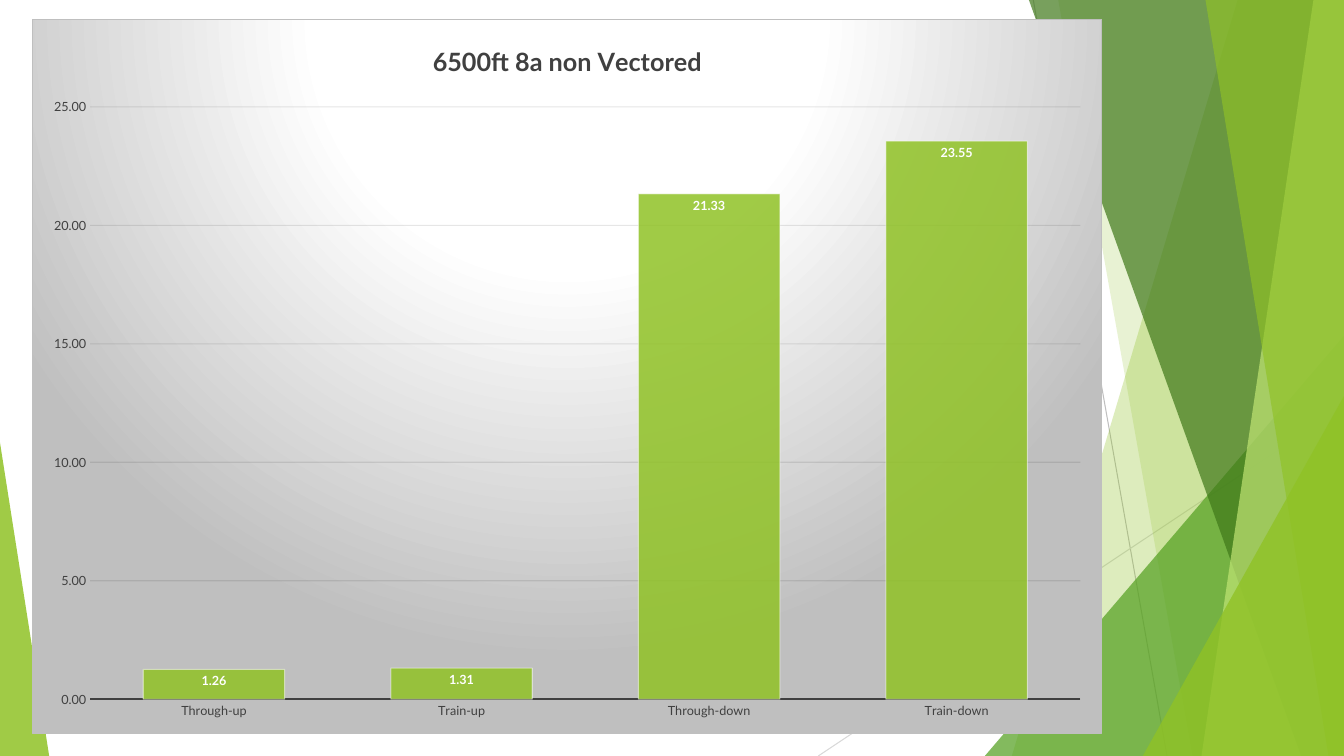
"""Build a slide with a column chart over a faceted green backdrop."""
from lxml import etree
from pptx import Presentation
from pptx import util as u
from pptx.chart import data as cd
from pptx.dml.color import RGBColor
from pptx.enum import chart as ce, shapes
from pptx.oxml import ns, parse_xml

LIME = RGBColor(0x90, 0xC2, 0x26)
LEAF = RGBColor(0x54, 0xA0, 0x21)
PINE = RGBColor(0x3F, 0x78, 0x19)
PALE = RGBColor(0xC0, 0xE4, 0x74)
SILVER = RGBColor(0xBF, 0xBF, 0xBF)
MIST = RGBColor(0xD9, 0xD9, 0xD9)
SLATE = RGBColor(0x40, 0x40, 0x40)
INK = RGBColor(0x0D, 0x0D, 0x0D)
BLACK = RGBColor(0, 0, 0)
WHITE = RGBColor(0xFF, 0xFF, 0xFF)

WIDE, TALL = 33.87, 19.05
TITLE = "6500ft 8a non Vectored"
TIMES = {"Through-up": 1.26, "Train-up": 1.31, "Through-down": 21.33, "Train-down": 23.55}
FRAME = (0.81, 0.48, 26.97, 18.01)
RAYS = [((26.04, 0), (29.41, TALL), SILVER), ((WIDE, 10.24), (20.62, TALL), MIST)]
# Each facet: kind, numbers, colour, opacity
FACETS = [
    ("band", (31.19, 25.5), LIME, 30),
    ("band", (26.67, 30.05), LIME, 20),
    ("peak", (24.82, 8.46, WIDE, 1), LEAF, 72),
    ("band", (25.93, 32.79), PINE, 70),
    ("band", (33.1, 30.28), PALE, 70),
    ("band", (30.38, 33.48), LIME, 65),
    ("peak", (28.8, 9.98, WIDE, 1), LIME, 80),
    ("peak", (0, 11.15, 1.24, 0), LIME, 85),
]
FONTS = {
    "base": {"name": "Lato", "size": u.Pt(10)},
    "title": {"name": "Lato", "size": u.Pt(18), "bold": True},
    "axis": {"name": "Lato", "size": u.Pt(9), "bold": False},
    "label": {"name": "Lato", "size": u.Pt(9), "bold": True},
}
AXIS = {"major_tick_mark": ce.XL_TICK_MARK.NONE, "minor_tick_mark": ce.XL_TICK_MARK.NONE}
SCALE = {"minimum_scale": 0, "maximum_scale": 25, "major_unit": 5, "has_major_gridlines": True}
LABELS = {"show_value": True, "number_format": "0.00", "number_format_is_linked": False,
          "position": ce.XL_LABEL_POSITION.INSIDE_END}
GLOW = f"""<c:spPr {ns.nsdecls('c', 'a')}><a:gradFill><a:gsLst>
<a:gs pos="0"><a:srgbClr val="{WHITE}"/></a:gs><a:gs pos="39000"><a:srgbClr val="{WHITE}"/></a:gs>
<a:gs pos="100000"><a:srgbClr val="{SILVER}"/></a:gs></a:gsLst>
<a:path path="circle"><a:fillToRect l="50000" t="-80000" r="50000" b="180000"/></a:path></a:gradFill>
<a:ln w="9525"><a:solidFill><a:srgbClr val="{SILVER}"/></a:solidFill></a:ln></c:spPr>"""


def put(item, values):
    for name, value in values.items():
        setattr(item, name, value)


def paint(fill, color, alpha=100):
    fill.solid()
    fill.fore_color.rgb = color
    if alpha < 100:
        solid = fill._xPr.find(ns.qn("a:solidFill"))
        etree.SubElement(solid[0], ns.qn("a:alpha"), val=str(alpha * 1000))


def stroke(line, color, width, alpha=100):
    paint(line.fill, color, alpha)
    line.width = u.Pt(width)


def style(font, kind, color):
    put(font, FONTS[kind])
    font.color.rgb = color


def draw_ray(pen, start, end, color):
    ends = [u.Cm(n) for n in start + end]
    ray = pen.add_connector(shapes.MSO_CONNECTOR.STRAIGHT, *ends)
    stroke(ray.line, color, 0.75)
    etree.SubElement(ray._element.spPr, ns.qn("a:effectLst"))


def draw_facet(pen, kind, nums, color, alpha):
    if kind == "band":
        top, foot = nums
        spots = [(u.Cm(x), u.Cm(y)) for x, y in ((top, 0), (WIDE, 0), (WIDE, TALL), (foot, TALL))]
        path = pen.build_freeform(*spots[0])
        path.add_line_segments(spots[1:])
        facet = path.convert_to_shape()
    else:
        left, top, right, tip = nums
        box = [u.Cm(n) for n in (left, top, right - left, TALL - top)]
        facet = pen.add_shape(shapes.MSO_SHAPE.ISOSCELES_TRIANGLE, *box)
        facet.adjustments[0] = tip
    facet.shadow.inherit = False
    paint(facet.fill, color, alpha)
    facet.line.fill.background()


def draw_chart(pen):
    data = cd.CategoryChartData(number_format="0.00")
    data.categories = list(TIMES)
    data.add_series(TITLE, list(TIMES.values()))
    box = [u.Cm(n) for n in FRAME]
    chart = pen.add_chart(ce.XL_CHART_TYPE.COLUMN_CLUSTERED, *box, data).chart
    style(chart.font, "base", BLACK)
    put(chart, {"has_legend": False, "has_title": True})
    chart._chartSpace.find(ns.qn("c:chart")).addnext(parse_xml(GLOW))

    head = chart.chart_title.text_frame
    head.text = TITLE
    style(head.paragraphs[0].runs[0].font, "title", SLATE)

    cats, vals = chart.category_axis, chart.value_axis
    for axis in (cats, vals):
        put(axis, AXIS)
        style(axis.tick_labels.font, "axis", SLATE)
    stroke(cats.format.line, SLATE, 1.5)
    put(vals, SCALE)
    put(vals.tick_labels, {"number_format": "0.00", "number_format_is_linked": False})
    vals.format.line.fill.background()
    stroke(vals.major_gridlines.format.line, INK, 0.75, 10)

    plot = chart.plots[0]
    put(plot, {"gap_width": 75, "overlap": 40, "vary_by_categories": False})
    bars = plot.series[0]
    paint(bars.format.fill, LIME, 85)
    stroke(bars.format.line, WHITE, 0.75, 50)
    put(bars.data_labels, LABELS)
    style(bars.data_labels.font, "label", WHITE)


def main():
    deck = Presentation()
    put(deck, {"slide_width": u.Cm(WIDE), "slide_height": u.Cm(TALL)})
    pen = deck.slides.add_slide(deck.slide_layouts[6]).shapes
    for ray in RAYS:
        draw_ray(pen, *ray)
    for facet in FACETS:
        draw_facet(pen, *facet)
    draw_chart(pen)
    deck.save("out.pptx")


if __name__ == "__main__":
    main()
